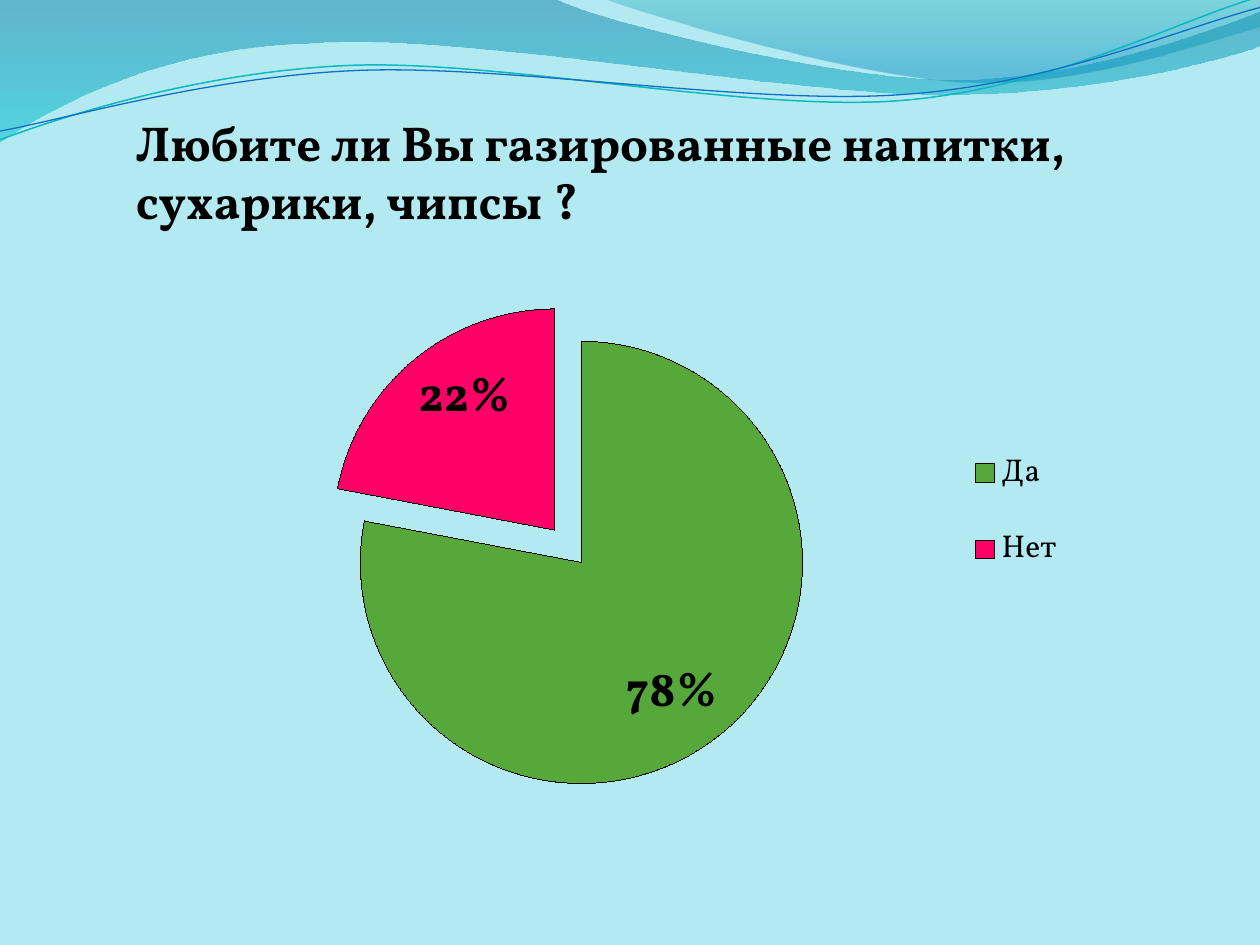
from lxml.etree import SubElement
from pptx import Presentation
from pptx.chart.data import CategoryChartData
from pptx.dml.color import RGBColor
from pptx.enum.chart import XL_CHART_TYPE as ChartType
from pptx.enum.chart import XL_LABEL_POSITION as LabelPosition
from pptx.enum.chart import XL_LEGEND_POSITION as LegendPosition
from pptx.enum.text import MSO_AUTO_SIZE as AutoSize
from pptx.oxml import parse_xml
from pptx.oxml.ns import nsdecls, qn
from pptx.util import Inches, Pt

COLORS = {
    "background": "B3EAF2",
    "text": "000000",
    "yes": "55A839",
    "no": "FF0066",
    "teal_line": "0AB8BF",
    "blue_line": "0F6FC6",
    "wave_top": "0074A1",
    "wave_bottom": "00C6CF",
    "crest_top": "00A1A9",
    "crest_bottom": "008BBF",
}

WAVE = [(0, 0), (4.4, -0.01), (4.76, 0.17, 6.64, 0.63, 7.58, 0.63),
        (8.53, 0.63, 9.58, 0.26, 10, 0.09), (10.01, 0.36),
        (9.83, 0.44, 8.7, 0.76, 7.46, 0.75), (6.22, 0.75, 3.82, 0.28, 2.57, 0.34),
        (1.29, 0.36, 0.46, 0.83, -0.01, 1.13), (0, 0)]
CREST = [(4.79, -0.01), (5.09, 0.11, 6.82, 0.62, 7.69, 0.65),
         (8.56, 0.69, 9.61, 0.32, 10, 0.21), (10, 0), (4.79, -0.01)]
TEAL_CURVE = [(0, 1.11), (0.48, 0.93, 1.58, 0.57, 2.77, 0.52),
              (3.95, 0.47, 5.93, 0.89, 7.13, 0.8), (8.33, 0.71, 9.38, 0.15, 9.98, -0.02)]
BLUE_CURVE = [(0, 1.04), (0.47, 0.96, 1.64, 0.61, 2.83, 0.56),
              (4.03, 0.51, 5.97, 0.84, 7.17, 0.75), (8.36, 0.67, 9.41, 0.21, 10, 0.06)]


class SlideBuilder:
    font_name = "Vollkorn"

    def __init__(self, slide):
        self.slide = slide

    def color(self, key):
        return RGBColor.from_string(COLORS[key])

    def style_font(self, font, size, bold=False):
        font.name = self.font_name
        font.size = Pt(size)
        font.bold = bold
        font.color.rgb = self.color("text")

    def background(self, key):
        fill = self.slide.background.fill
        fill.solid()
        fill.fore_color.rgb = self.color(key)

    def outline(self, segments, closed):
        points = [(Inches(segment[i]), Inches(segment[i + 1]))
                  for segment in segments for i in range(0, len(segment), 2)]
        builder = self.slide.shapes.build_freeform(*points[0])
        builder.add_line_segments(points[1:], close=closed)
        shape = builder.convert_to_shape()
        shape.shadow.inherit = False
        lines = iter(list(shape.element.iter(qn("a:lnTo"))))
        for segment in segments[1:]:
            line = next(lines)
            if len(segment) == 6:
                bezier = parse_xml(f'<a:cubicBezTo {nsdecls("a")}/>')
                line.addprevious(bezier)
                for part in (line, next(lines), next(lines)):
                    bezier.append(part[0])
                    part.getparent().remove(part)
        return shape

    def band(self, segments, stops):
        shape = self.outline(segments, closed=True)
        shape.line.fill.background()
        stop_xml = "".join(
            f'<a:gs pos="{pos * 1000}"><a:srgbClr val="{COLORS[key]}">'
            f'<a:alpha val="{opacity * 1000}"/></a:srgbClr></a:gs>'
            for pos, key, opacity in stops)
        gradient = parse_xml(
            f'<a:gradFill {nsdecls("a")} rotWithShape="1"><a:gsLst>{stop_xml}</a:gsLst>'
            '<a:lin ang="5400000" scaled="0"/></a:gradFill>')
        shape.element.spPr.find(qn("a:custGeom")).addnext(gradient)

    def curve(self, segments, key, width):
        shape = self.outline(segments, closed=False)
        shape.fill.background()
        shape.line.color.rgb = self.color(key)
        shape.line.width = Pt(width)

    def title(self, text, left, top, width, height):
        box = self.slide.shapes.add_textbox(
            Inches(left), Inches(top), Inches(width), Inches(height))
        box.text_frame.word_wrap = True
        box.text_frame.auto_size = AutoSize.SHAPE_TO_FIT_TEXT
        run = box.text_frame.paragraphs[0].add_run()
        run.text = text
        self.style_font(run.font, 28, bold=True)

    def layout(self, parent, area, frame, inner=False):
        for old in parent.findall(qn("c:layout")):
            parent.remove(old)
        layout = parse_xml(f'<c:layout {nsdecls("c")}/>')
        manual = SubElement(layout, qn("c:manualLayout"))
        if inner:
            SubElement(manual, qn("c:layoutTarget"), val="inner")
        for tag in ("xMode", "yMode"):
            SubElement(manual, qn(f"c:{tag}"), val="edge")
        left, top, width, height = frame
        fractions = ((area[0] - left) / width, (area[1] - top) / height,
                     area[2] / width, area[3] / height)
        for tag, value in zip("xywh", fractions):
            SubElement(manual, qn(f"c:{tag}"), val=f"{value:.4f}")
        position = parent.find(qn("c:legendPos"))
        if position is None:
            parent.insert(0, layout)
        else:
            position.addnext(layout)

    def pie(self, answers, frame, pie_area, legend_area):
        data = CategoryChartData()
        data.categories = [name for name, share, key, explosion in answers]
        data.add_series("Series 1", [share for name, share, key, explosion in answers])
        chart = self.slide.shapes.add_chart(
            ChartType.PIE, *[Inches(length) for length in frame], data).chart
        chart.has_title = False
        self.style_font(chart.font, 18)

        chart.has_legend = True
        legend = chart.legend
        legend.position = LegendPosition.RIGHT
        legend.include_in_layout = False
        self.style_font(legend.font, 18)
        self.layout(legend._element, legend_area, frame)

        plot = chart.plots[0]
        self.layout(plot._element.getparent(), pie_area, frame, inner=True)
        plot.vary_by_categories = True
        plot.has_data_labels = True
        labels = plot.data_labels
        labels.show_percentage = True
        labels.show_value = False
        labels.number_format = "0%"
        labels.number_format_is_linked = False
        labels.position = LabelPosition.INSIDE_END
        self.style_font(labels.font, 28, bold=True)

        series = plot.series[0]
        series.format.line.color.rgb = self.color("text")
        series.format.line.width = Pt(0.75)
        for index, (name, share, key, explosion) in enumerate(answers):
            point = series.points[index]
            point.format.fill.solid()
            point.format.fill.fore_color.rgb = self.color(key)
            point.format.line.color.rgb = self.color("text")
            if explosion:
                slice_format = series._element.findall(qn("c:dPt"))[index]
                slice_format.find(qn("c:spPr")).addprevious(
                    parse_xml(f'<c:explosion {nsdecls("c")} val="{explosion}"/>'))


def main():
    deck = Presentation()
    deck.slide_width, deck.slide_height = Inches(10), Inches(7.5)
    page = SlideBuilder(deck.slides.add_slide(deck.slide_layouts[6]))
    page.background("background")
    page.band(WAVE, [(0, "wave_top", 45), (100, "wave_bottom", 55)])
    page.band(CREST, [(0, "crest_top", 30), (80, "crest_bottom", 45)])
    page.curve(TEAL_CURVE, "teal_line", 0.85)
    page.curve(BLUE_CURVE, "blue_line", 0.75)
    page.title("Любите ли Вы газированные напитки, сухарики, чипсы ?", 0.98, 0.84, 7.72, 1.04)
    page.pie([("Да", 78, "yes", 0), ("Нет", 22, "no", 19)],
             frame=(1.3, 1.92, 7.4, 4.98),
             pie_area=(2.86, 2.71, 3.51, 3.51),
             legend_area=(7.62, 3.33, 0.89, 1.46))
    deck.save("out.pptx")


if __name__ == "__main__":
    main()
